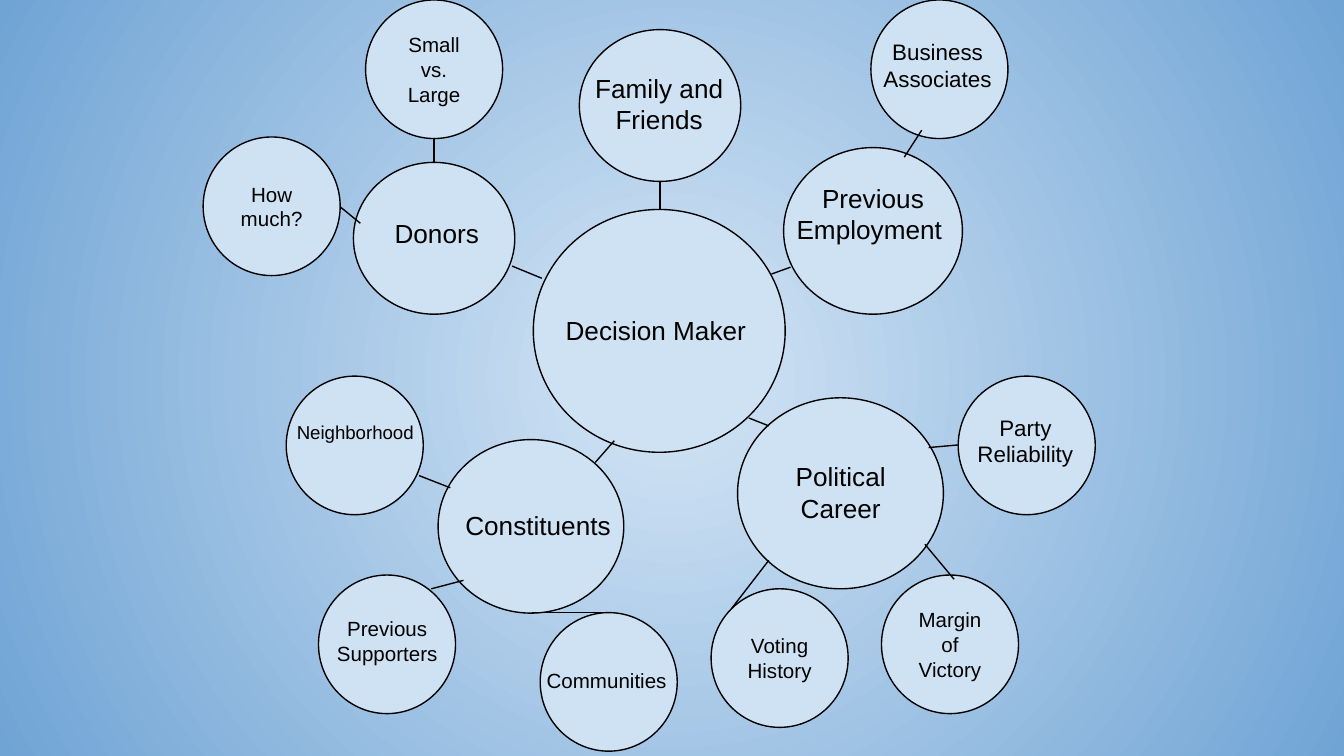
"""Build a bubble map of the influences around a decision maker."""
from pptx import Presentation
from pptx.dml.color import RGBColor
from pptx.enum.shapes import MSO_CONNECTOR, MSO_SHAPE
from pptx.enum.text import MSO_ANCHOR, PP_ALIGN
from pptx.oxml import parse_xml
from pptx.oxml.ns import nsdecls, qn
from pptx.util import Cm, Pt

INK = "000000"
BUBBLE = "CFE2F3"
CENTRE, EDGE = "D4E5F5", "70A4D5"
LINE_WIDTH = Pt(0.75)
INSET = Cm(0.25)
LEAF = (2.59, 2.62)
BRANCH = (3.05, 2.87)

BUBBLES = [
    (10.08, 3.96, 4.76, 4.59),
    (10.95, 0.56, *BRANCH),
    (14.81, 2.79, 3.38, 3.15),
    (8.28, 8.31, 3.51, 3.28),
    (13.94, 7.52, 3.89, 3.61),
    (6.68, 3.07, *BRANCH),
    (5.41, 7.11, *LEAF),
    (10.21, 11.58, *LEAF),
    (16.46, 0, *LEAF),
    (18.11, 7.11, *LEAF),
    (6.02, 10.87, *LEAF),
]

LABELED_BUBBLES = [
    ("Voting History", 13.44, 11.13),
    ("Margin of Victory", 16.66, 10.87),
    ("Small vs. Large", 6.91, 0),
    ("How much?", 3.84, 2.59),
]

LINKS = [
    (9.68, 5.03, 10.24, 5.26),
    (6.43, 3.91, 6.81, 4.22),
    (8.2, 2.6, 8.2, 3.07),
    (14.58, 5.18, 14.94, 5.05),
    (12.47, 3.43, 12.47, 3.96),
    (17.42, 2.46, 17.09, 2.97),
    (7.92, 8.99, 8.51, 9.22),
    (11.61, 8.33, 11.25, 8.74),
    (14.53, 10.59, 13.82, 11.51),
    (17.48, 10.29, 18.03, 10.95),
    (17.55, 8.46, 18.11, 8.41),
    (10.06, 11.58, 11.51, 11.58),
    (14.15, 7.9, 14.53, 8.05),
    (8.15, 11.13, 8.76, 10.97),
]

LABELS = [
    ("Decision Maker", 14, PP_ALIGN.LEFT, (10.44, 5.69, 4.04, 0.99)),
    ("Family and Friends", 14, PP_ALIGN.CENTER, (10.44, 1.12, 4.04, 1.55)),
    ("Previous Employment ", 14, PP_ALIGN.CENTER, (14.48, 3.2, 4.04, 1.55)),
    ("Constituents", 14, PP_ALIGN.CENTER, (8.15, 9.37, 4.04, 0.99)),
    ("Political Career", 14, PP_ALIGN.CENTER, (14.05, 8.46, 3.68, 1.42)),
    ("Donors", 14, PP_ALIGN.CENTER, (6.73, 3.86, 3.05, 0.99)),
    ("Party Reliability", 12, PP_ALIGN.CENTER, (17.83, 7.57, 3.1, 1.55)),
    ("Communities", 11, PP_ALIGN.LEFT, (10.08, 12.4, 3.1, 0.99)),
    ("Previous Supporters", 11, PP_ALIGN.CENTER, (5.77, 11.4, 3.1, 1.45)),
    ("Neighborhood", 10, PP_ALIGN.LEFT, (5.36, 7.75, 3.1, 0.94)),
    ("Business Associates", 12, PP_ALIGN.CENTER, (16.03, 0.48, 3.38, 1.55)),
]


def color(value):
    return RGBColor.from_string(value)


def write(shape, text, size=11, align=PP_ALIGN.CENTER, anchor=MSO_ANCHOR.TOP):
    frame = shape.text_frame
    frame.word_wrap = True
    frame.vertical_anchor = anchor
    frame.margin_left = frame.margin_right = INSET
    frame.margin_top = frame.margin_bottom = INSET
    paragraph = frame.paragraphs[0]
    paragraph.alignment = align
    run = paragraph.add_run()
    run.text = text
    run.font.name = "Arial"
    run.font.size = Pt(size)
    run.font.color.rgb = color(INK)


def add_bubble(slide, box):
    bubble = slide.shapes.add_shape(MSO_SHAPE.OVAL, *map(Cm, box))
    bubble.shadow.inherit = False
    bubble.fill.solid()
    bubble.fill.fore_color.rgb = color(BUBBLE)
    bubble.line.color.rgb = color(INK)
    bubble.line.width = LINE_WIDTH
    return bubble


def add_link(slide, ends):
    link = slide.shapes.add_connector(MSO_CONNECTOR.STRAIGHT, *map(Cm, ends))
    link.line.color.rgb = color(INK)
    link.line.width = LINE_WIDTH
    link._element.spPr.append(parse_xml(f"<a:effectLst {nsdecls('a')}/>"))


def paint_background(slide):
    fill = slide.background.fill
    fill.gradient()
    for stop, position, value in zip(fill.gradient_stops, (0, 1), (CENTRE, EDGE)):
        stop.position = position
        stop.color.rgb = color(value)
    gradient = slide._element.find(".//" + qn("a:gradFill"))
    gradient.replace(gradient.find(qn("a:lin")), parse_xml(
        f'<a:path {nsdecls("a")} path="circle">'
        '<a:fillToRect l="50000" t="50000" r="50000" b="50000"/></a:path>'))


def main():
    deck = Presentation()
    deck.slide_width, deck.slide_height = Cm(25.4), Cm(14.29)
    slide = deck.slides.add_slide(deck.slide_layouts[6])
    paint_background(slide)
    for box in BUBBLES:
        add_bubble(slide, box)
    for text, left, top in LABELED_BUBBLES:
        write(add_bubble(slide, (left, top, *LEAF)), text, anchor=MSO_ANCHOR.MIDDLE)
    for ends in LINKS:
        add_link(slide, ends)
    for text, size, align, box in LABELS:
        write(slide.shapes.add_textbox(*map(Cm, box)), text, size=size, align=align)
    deck.save("out.pptx")


if __name__ == "__main__":
    main()
